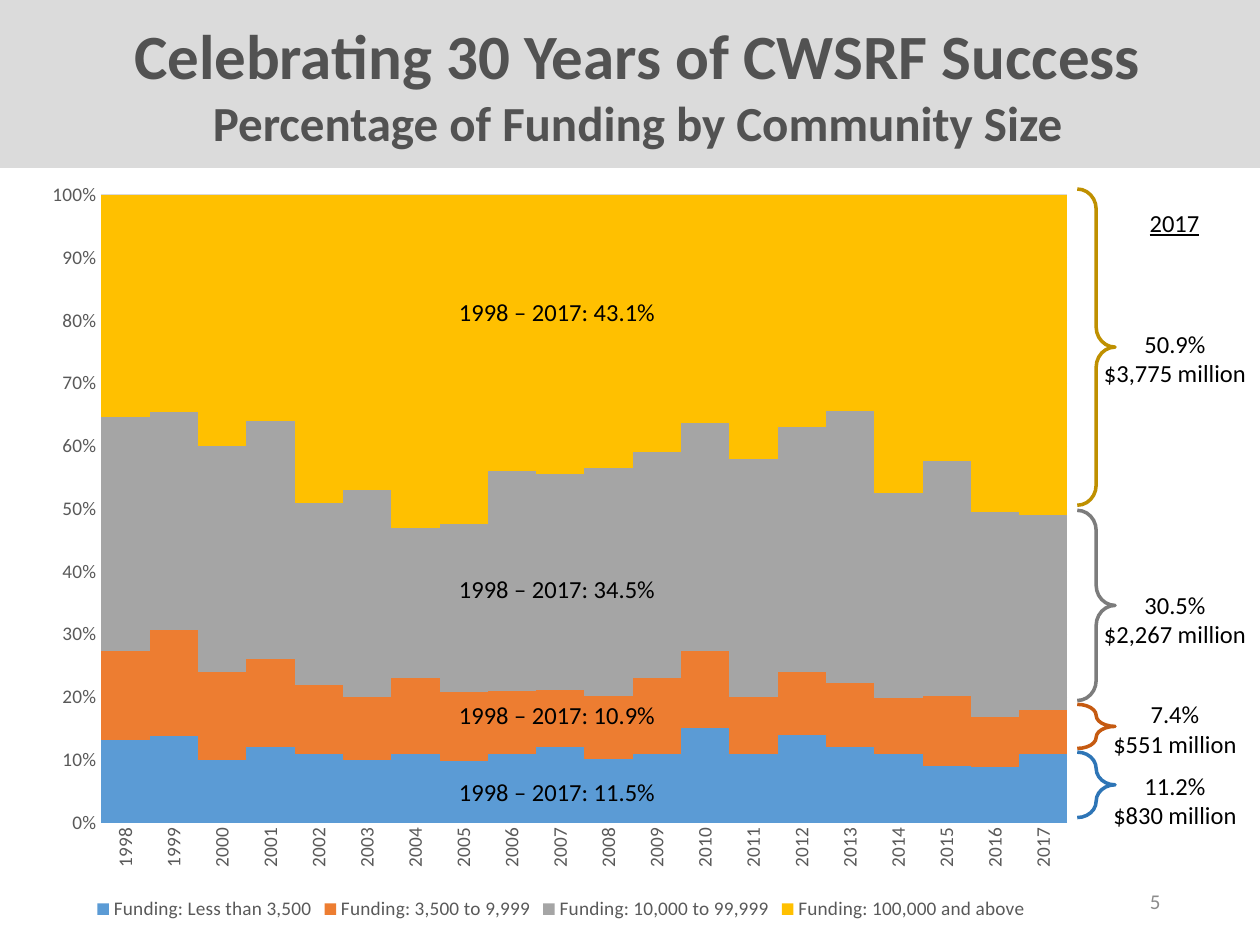
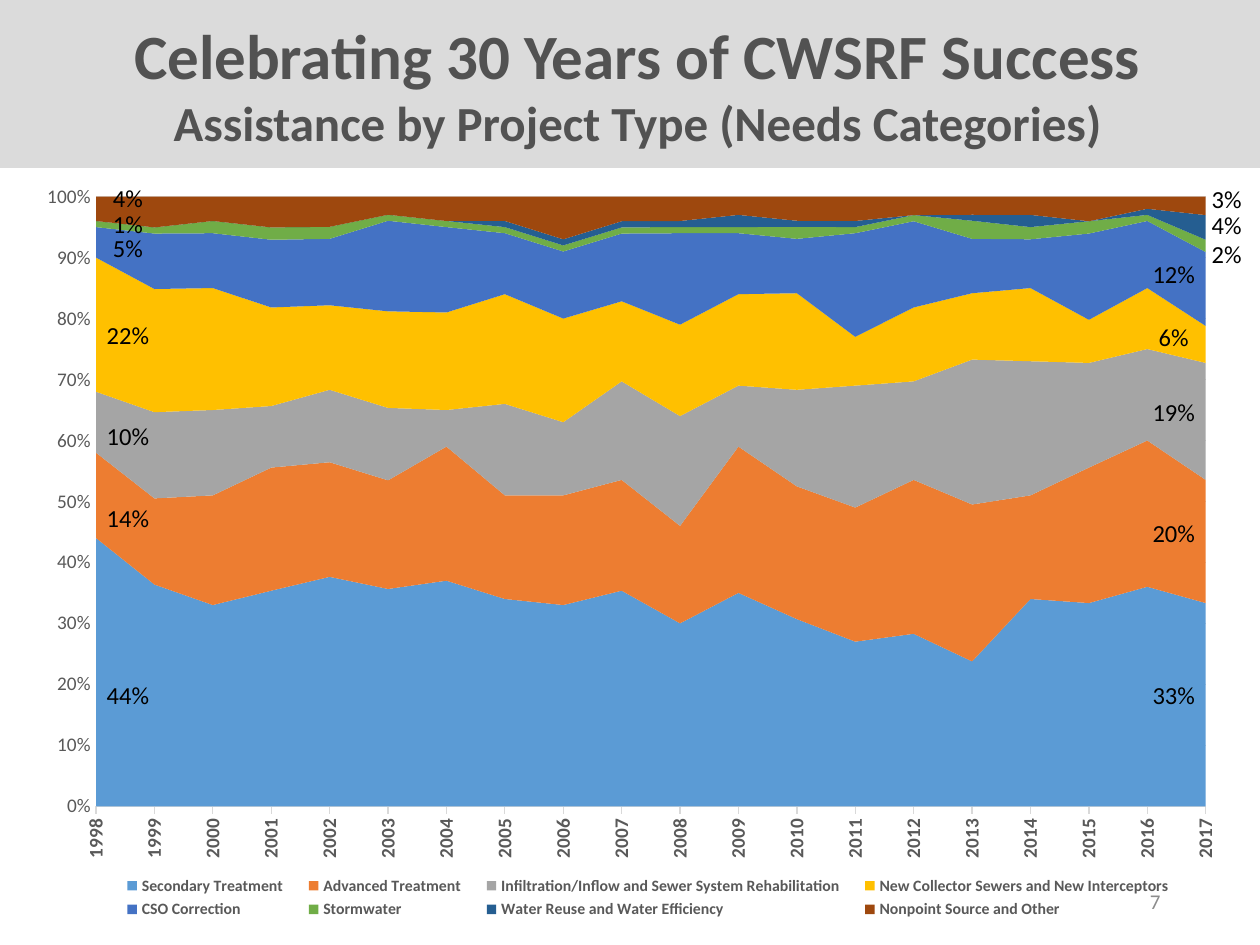
from pptx import Presentation
from pptx.chart.data import CategoryChartData
from pptx.dml.color import RGBColor
from pptx.enum.chart import XL_CHART_TYPE, XL_LEGEND_POSITION, XL_TICK_MARK
from pptx.enum.shapes import MSO_SHAPE
from pptx.enum.text import MSO_ANCHOR, MSO_AUTO_SIZE, PP_ALIGN
from pptx.oxml import parse_xml
from pptx.oxml.ns import nsdecls
from pptx.util import Pt

COLUMNS = XL_CHART_TYPE.COLUMN_STACKED_100
AREAS = XL_CHART_TYPE.AREA_STACKED_100
BOTTOM = XL_LEGEND_POSITION.BOTTOM
NO_TICK, TICK_OUT = XL_TICK_MARK.NONE, XL_TICK_MARK.OUTSIDE
RIGHT_BRACE = MSO_SHAPE.RIGHT_BRACE
MIDDLE = MSO_ANCHOR.MIDDLE
NO_FIT, GROW = MSO_AUTO_SIZE.NONE, MSO_AUTO_SIZE.SHAPE_TO_FIT_TEXT
CENTER, RIGHT = PP_ALIGN.CENTER, PP_ALIGN.RIGHT

FONT = "Calibri"
TITLE = "Celebrating 30 Years of CWSRF Success"
YEARS = [str(year) for year in range(1998, 2018)]
COLORS = {
    name: RGBColor.from_string(code)
    for name, code in {
        "band": "DBDBDB", "title": "525252", "text": "000000",
        "axis": "595959", "grid": "D9D9D9", "number": "8C8C8C",
        "blue": "5B9BD5", "orange": "ED7D31", "gray": "A5A5A5",
        "gold": "FFC000", "royal": "4472C4", "green": "70AD47",
        "navy": "255E91", "brown": "9E480E", "dark gold": "BF9000",
        "dark gray": "7C7C7C", "dark orange": "C55A11", "dark blue": "2E75B6",
    }.items()
}

COMMUNITY_SIZES = [
    ("Funding: Less than 3,500", "blue",
     [13, 14, 10, 12, 11, 10, 11, 10, 11, 12, 10, 11, 15, 11, 14, 12, 11, 9, 9, 11]),
    ("Funding: 3,500 to 9,999", "orange",
     [14, 17, 14, 14, 11, 10, 12, 11, 10, 9, 10, 12, 12, 9, 10, 10, 9, 11, 8, 7]),
    ("Funding: 10,000 to 99,999", "gray",
     [37, 35, 36, 38, 29, 33, 24, 27, 35, 34, 36, 36, 36, 38, 39, 43, 33, 37, 33, 31]),
    ("Funding: 100,000 and above", "gold",
     [35, 35, 40, 36, 49, 47, 53, 53, 44, 44, 43, 41, 36, 42, 37, 34, 48, 42, 51, 51]),
]
PROJECT_TYPES = [
    ("Secondary Treatment", "blue",
     [44, 36, 33, 35, 38, 36, 37, 34, 33, 35, 30, 35, 31, 27, 28, 24, 34, 33, 36, 33]),
    ("Advanced Treatment", "orange",
     [14, 14, 18, 20, 19, 18, 22, 17, 18, 18, 16, 24, 22, 22, 25, 26, 17, 22, 24, 20]),
    ("Infiltration/Inflow and Sewer System Rehabilitation", "gray",
     [10, 14, 14, 10, 12, 12, 6, 15, 12, 16, 18, 10, 16, 20, 16, 24, 22, 17, 15, 19]),
    ("New Collector Sewers and New Interceptors", "gold",
     [22, 20, 20, 16, 14, 16, 16, 18, 17, 13, 15, 15, 16, 8, 12, 11, 12, 7, 10, 6]),
    ("CSO Correction", "royal",
     [5, 9, 9, 11, 11, 15, 14, 10, 11, 11, 15, 10, 9, 17, 14, 9, 8, 14, 11, 12]),
    ("Stormwater", "green",
     [1, 1, 2, 2, 2, 1, 1, 1, 1, 1, 1, 1, 2, 1, 1, 3, 2, 2, 1, 2]),
    ("Water Reuse and Water Efficiency", "navy",
     [0, 0, 0, 0, 0, 0, 0, 1, 1, 1, 1, 2, 1, 1, 0, 1, 2, 0, 1, 4]),
    ("Nonpoint Source and Other", "brown",
     [4, 5, 4, 5, 5, 3, 4, 4, 7, 4, 4, 3, 4, 4, 3, 3, 3, 4, 2, 3]),
]
PAGES = [
    {"number": "5", "subtitle": "Percentage of Funding by Community Size",
     "chart": COLUMNS, "series": COMMUNITY_SIZES, "bold": False,
     "frame": (18.7, 95.8, 604, 433.4), "plot": (0.065, 0.036, 0.914, 0.828),
     "legend": None, "legend size": 11, "tick": NO_TICK, "crossing": "between"},
    {"number": "7", "subtitle": "Assistance by Project Type (Needs Categories)",
     "chart": AREAS, "series": PROJECT_TYPES, "bold": True,
     "frame": (20.2, 103, 679.7, 427), "plot": (0.051, 0.022, 0.933, 0.816),
     "legend": (0.06, 0.925, 0.91, 0.07), "legend size": 9, "tick": TICK_OUT,
     "crossing": "midCat"},
]


def add_label(slide, text, left, top, width, size=14, color="text", align=CENTER):
    label = slide.shapes.add_textbox(Pt(left), Pt(top), Pt(width), Pt(24.5))
    frame = label.text_frame
    frame.text = text
    frame.word_wrap = True
    frame.auto_size = GROW
    for paragraph in frame.paragraphs:
        paragraph.alignment = align
        for run in paragraph.runs:
            run.font.name = FONT
            run.font.size = Pt(size)
            run.font.color.rgb = COLORS[color]
    return label


def set_layout(parent, index, box, target=""):
    for old in parent.xpath("c:layout"):
        parent.remove(old)
    modes = '<c:xMode val="edge"/><c:yMode val="edge"/>'
    sides = "".join(f'<c:{side} val="{value}"/>' for side, value in zip("xywh", box))
    parent.insert(index, parse_xml(
        f'<c:layout {nsdecls("c")}><c:manualLayout>{target}{modes}{sides}'
        "</c:manualLayout></c:layout>"))


deck = Presentation()
deck.slide_width, deck.slide_height = Pt(720), Pt(540)
slides = []

for page in PAGES:
    slide = deck.slides.add_slide(deck.slide_layouts[5])
    slides.append(slide)

    band = slide.shapes.title
    band.left, band.top, band.width, band.height = Pt(0), Pt(0), Pt(720), Pt(96)
    band.fill.solid()
    band.fill.fore_color.rgb = COLORS["band"]
    heading = band.text_frame
    heading.text = f"{TITLE}\n{page['subtitle']}"
    heading.vertical_anchor = MIDDLE
    heading.auto_size = NO_FIT
    for paragraph, size in zip(heading.paragraphs, (36, 28)):
        paragraph.alignment = CENTER
        properties = paragraph._p.get_or_add_pPr()
        properties.set("marL", str(Pt(8.6)))
        properties.set("indent", "0")
        font = paragraph.runs[0].font
        font.name, font.size, font.bold = FONT, Pt(size), True
        font.color.rgb = COLORS["title"]

    data = CategoryChartData()
    data.categories = YEARS
    for name, color, shares in page["series"]:
        data.add_series(name, shares)
    chart = slide.shapes.add_chart(
        page["chart"], *[Pt(length) for length in page["frame"]], data).chart
    chart.has_title = False
    chart.font.name, chart.font.size = FONT, Pt(10)
    plot = chart.plots[0]
    plot.vary_by_categories = False
    if page["chart"] == COLUMNS:
        plot.gap_width, plot.overlap = 0, 100
    for series, (name, color, shares) in zip(plot.series, page["series"]):
        series.format.fill.solid()
        series.format.fill.fore_color.rgb = COLORS[color]
        series.format.line.fill.background()

    years, percent = chart.category_axis, chart.value_axis
    chart.has_legend = True
    legend = chart.legend
    legend.position = BOTTOM
    legend.include_in_layout = False
    for font, size, bold in (
            (years.tick_labels.font, 11, page["bold"]),
            (percent.tick_labels.font, 11, False),
            (legend.font, page["legend size"], page["bold"])):
        font.name, font.size, font.bold = FONT, Pt(size), bold
        font.color.rgb = COLORS["axis"]
    years.major_tick_mark = page["tick"]
    percent.major_tick_mark = NO_TICK
    years.has_major_gridlines = False
    percent.has_major_gridlines = True
    for line in (years.format.line, percent.major_gridlines.format.line):
        line.color.rgb = COLORS["grid"]
        line.width = Pt(0.75)
    percent.format.line.fill.background()
    percent.minimum_scale, percent.maximum_scale, percent.major_unit = 0, 1, 0.1
    percent.tick_labels.number_format = "0%"
    percent.tick_labels.number_format_is_linked = False
    for rotation in years._element.xpath("c:txPr/a:bodyPr"):
        rotation.set("rot", "-5400000")
        rotation.set("vert", "horz")
    for crossing in percent._element.xpath("c:crossBetween"):
        crossing.set("val", page["crossing"])
    set_layout(chart._chartSpace.chart.plotArea, 0, page["plot"],
               '<c:layoutTarget val="inner"/>')
    if page["legend"]:
        set_layout(legend._element, 1, page["legend"])

    number = add_label(slide, page["number"], 508.3, 500.4, 162, 12, "number", RIGHT)
    number.text_frame.auto_size = NO_FIT
    number.text_frame.vertical_anchor = MIDDLE
    number.height = Pt(28.8)

community, projects = slides

for share, top in (("11.5%", 440.6), ("10.9%", 396.7), ("34.5%", 324.7), ("43.1%", 166.3)):
    add_label(community, f"1998 – 2017: {share}", 239.8, top, 157)

latest_year = add_label(community, "2017", 646.6, 115.2, 49)
latest_year.text_frame.paragraphs[0].runs[0].font.underline = True

for color, brace_top, height, text, label_top in (
        ("dark gold", 108, 180.7, "50.9%\n$3,775 million", 184.3),
        ("dark gray", 291.6, 108.7, "30.5%\n$2,267 million", 333.4),
        ("dark orange", 402.5, 25.2, "7.4%\n$551 million", 396),
        ("dark blue", 429.8, 37.4, "11.2%\n$830 million", 437)):
    brace = community.shapes.add_shape(
        RIGHT_BRACE, Pt(615.6), Pt(brace_top), Pt(21.6), Pt(height))
    brace.adjustments[0] = 0.53
    brace.shadow.inherit = False
    brace.fill.background()
    brace.line.color.rgb = COLORS[color]
    brace.line.width = Pt(2)
    add_label(community, text, 619.2, label_top, 104.4)

for left, shares in (
        (49.7, (("44%", 385.2), ("14%", 283.7), ("10%", 236.9), ("22%", 179.3),
                ("5%", 129.6), ("1%", 115.9), ("4%", 100.8))),
        (647.3, (("33%", 385.2), ("20%", 292.3), ("19%", 223.2), ("6%", 180.7),
                 ("12%", 144.7))),
        (677.5, (("2%", 133.2), ("4%", 116.6), ("3%", 101.5)))):
    for share, top in shares:
        add_label(projects, share, left, top, 46.8)

deck.save("out.pptx")
